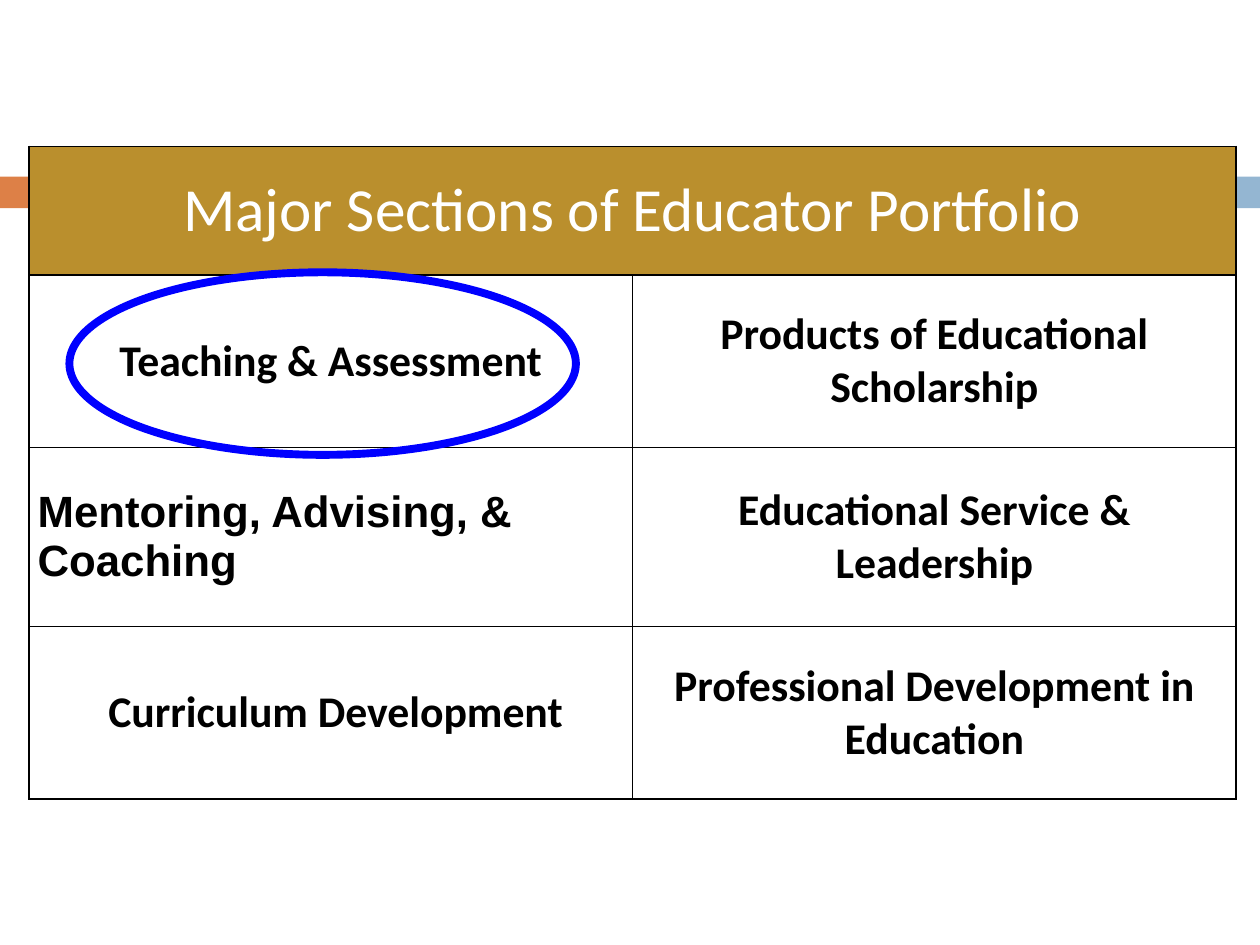
from lxml.etree import SubElement
from pptx import Presentation
from pptx.dml.color import RGBColor
from pptx.enum.shapes import MSO_SHAPE
from pptx.enum.text import MSO_ANCHOR, PP_ALIGN
from pptx.oxml.ns import qn
from pptx.util import Cm, Pt

COLORS = {
    "orange": "DD8047",
    "blue": "94B6D2",
    "gold": "BA8F2D",
    "white": "FFFFFF",
    "black": "000000",
    "highlight": "0000FF",
}
HEADING = "Major Sections of Educator Portfolio"
SECTIONS = [
    ("Teaching & Assessment", "Products of Educational Scholarship"),
    ("Mentoring, Advising, & Coaching", "Educational Service & Leadership"),
    (" Curriculum Development", "Professional Development in Education"),
]
ARIAL_SECTION = "Mentoring, Advising, & Coaching"
ROW_HEIGHTS = [2.59, 3.48, 3.61, 3.48]
COLUMN_WIDTH = 12.17


def rgb(name):
    """Return the palette colour with this name."""
    return RGBColor.from_string(COLORS[name])


def write_text(frame, text, size=25, font="Calibri", color="black", bold=True,
               align=PP_ALIGN.CENTER):
    """Write one formatted paragraph into a text frame."""
    paragraph = frame.paragraphs[0]
    paragraph.alignment = align
    run = paragraph.add_run()
    run.text = text
    run.font.size = Pt(size)
    run.font.name = font
    run.font.bold = bold
    run.font.color.rgb = rgb(color)


def add_figure(slide, preset, left, top, width, height, fill=None, line=None, weight=1):
    """Add a preset shape with an optional fill and outline."""
    figure = slide.shapes.add_shape(preset, Cm(left), Cm(top), Cm(width), Cm(height))
    figure.shadow.inherit = False
    if fill:
        figure.fill.solid()
        figure.fill.fore_color.rgb = rgb(fill)
    else:
        figure.fill.background()
    if line:
        figure.line.color.rgb = rgb(line)
        figure.line.width = Pt(weight)
    else:
        figure.line.fill.background()


def style_cell(cell, fill):
    """Set the fill, borders, margins and anchor of a cell."""
    cell.vertical_anchor = MSO_ANCHOR.MIDDLE
    cell.margin_left = cell.margin_right = Cm(0.18)
    cell.margin_top = cell.margin_bottom = Cm(0.1)
    properties = cell._tc.get_or_add_tcPr()
    for side in ("a:lnL", "a:lnR", "a:lnT", "a:lnB"):
        border = SubElement(properties, qn(side), w=str(Pt(1)))
        border_fill = SubElement(border, qn("a:solidFill"))
        SubElement(border_fill, qn("a:srgbClr"), val=COLORS["black"])
    cell.fill.solid()
    cell.fill.fore_color.rgb = rgb(fill)


def add_sections_table(slide):
    """Add the table of portfolio sections under a merged heading."""
    table = slide.shapes.add_table(
        len(ROW_HEIGHTS), 2, Cm(0.58), Cm(2.95),
        Cm(2 * COLUMN_WIDTH), Cm(sum(ROW_HEIGHTS))).table
    for column in table.columns:
        column.width = Cm(COLUMN_WIDTH)
    for row, height in zip(table.rows, ROW_HEIGHTS):
        row.height = Cm(height)

    heading = table.cell(0, 0)
    heading.merge(table.cell(0, 1))
    for cell in table.rows[0].cells:
        style_cell(cell, "gold")
    write_text(heading.text_frame, HEADING, size=35, color="white", bold=False)

    for row_index, sections in enumerate(SECTIONS, start=1):
        for column_index, section in enumerate(sections):
            cell = table.cell(row_index, column_index)
            style_cell(cell, "white")
            if section == ARIAL_SECTION:
                write_text(cell.text_frame, section, font="Arial", align=PP_ALIGN.LEFT)
            else:
                write_text(cell.text_frame, section)


def main():
    """Build the slide and save it."""
    deck = Presentation()
    deck.slide_width, deck.slide_height = Cm(25.4), Cm(19.05)
    slide = deck.slides.add_slide(deck.slide_layouts[6])
    add_figure(slide, MSO_SHAPE.RECTANGLE, 0, 3.56, 1.47, 0.64, fill="orange")
    add_figure(slide, MSO_SHAPE.RECTANGLE, 1.65, 3.56, 23.75, 0.64, fill="blue")
    add_sections_table(slide)
    add_figure(slide, MSO_SHAPE.OVAL, 1.4, 5.49, 10.21, 3.68, line="highlight", weight=4.5)
    deck.save("out.pptx")


if __name__ == "__main__":
    main()
